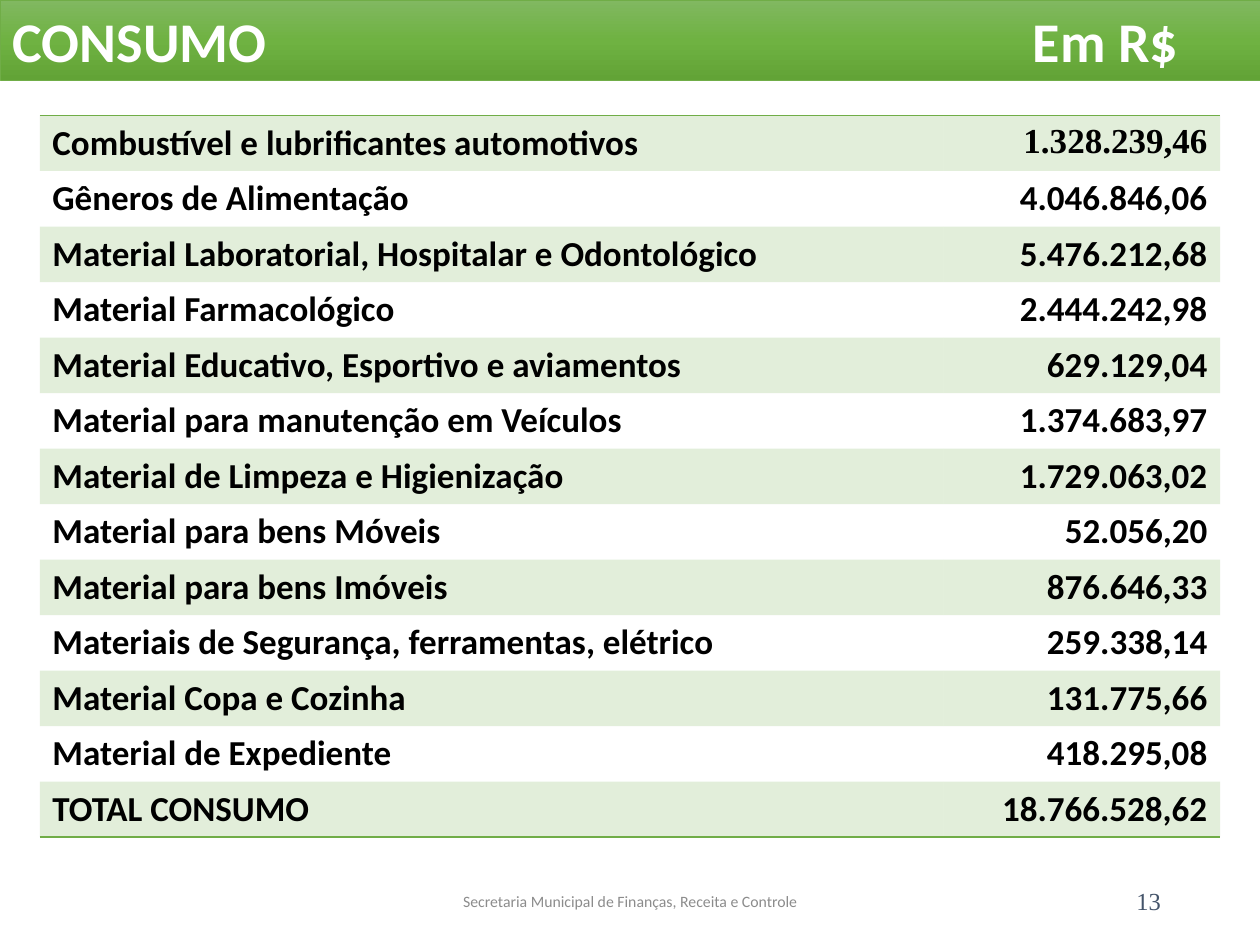
import copy
from dataclasses import dataclass

import pptx
import pptx.dml.color
import pptx.enum.text
import pptx.oxml
import pptx.oxml.ns
import pptx.util
from lxml import etree

Pt = pptx.util.Pt
Align = pptx.enum.text.PP_ALIGN
Anchor = pptx.enum.text.MSO_ANCHOR
qn = pptx.oxml.ns.qn


@dataclass(frozen=True)
class Theme:
    sans: str = "Calibri"
    serif: str = "Times New Roman"
    green: str = "70AD47"
    band_stops: tuple = ((0, "81B861"), (0.5, "6FB242"), (1, "62A336"))
    white: str = "FFFFFF"
    black: str = "000000"
    grey: str = "8C8C8C"
    slate: str = "44546A"
    title_size: int = 32
    table_size: int = 20
    number_size: int = 14
    footer_size: int = 9
    stripe_alpha: int = 20000
    plain_table_style: str = "{2D5ABB26-0587-4C30-8999-92F81FD0307C}"


THEME = Theme()

EXPENSES = [
    ("Combustível e lubrificantes automotivos", "1.328.239,46"),
    ("Gêneros de Alimentação", "4.046.846,06"),
    ("Material Laboratorial, Hospitalar e Odontológico", "5.476.212,68"),
    ("Material Farmacológico", "2.444.242,98"),
    ("Material Educativo, Esportivo e aviamentos", "629.129,04"),
    ("Material para manutenção em Veículos", "1.374.683,97"),
    ("Material de Limpeza e Higienização", "1.729.063,02"),
    ("Material para bens Móveis", "52.056,20"),
    ("Material para bens Imóveis", "876.646,33"),
    ("Materiais de Segurança, ferramentas, elétrico", "259.338,14"),
    ("Material Copa e Cozinha", "131.775,66"),
    ("Material de Expediente", "418.295,08"),
    ("TOTAL CONSUMO", "18.766.528,62"),
]


def rgb(value):
    return pptx.dml.color.RGBColor.from_string(value)


def style_paragraph(paragraph, size, color, font=THEME.sans, bold=False, align=Align.LEFT):
    paragraph.alignment = align
    paragraph.font.name = font
    paragraph.font.size = Pt(size)
    paragraph.font.bold = bold
    paragraph.font.color.rgb = rgb(color)


def fill_band(shape):
    """Fill a shape with the three-stop vertical gradient."""
    shape.fill.gradient()
    shape.fill.gradient_angle = 270
    stop_list = shape.element.spPr.find(".//" + qn("a:gsLst"))
    stop_list.append(copy.deepcopy(stop_list[0]))
    for stop, (position, color) in zip(shape.fill.gradient_stops, THEME.band_stops):
        stop.position = position
        stop.color.rgb = rgb(color)


def add_title_band(page, left_label, right_label, tab_position):
    title = page.shapes.title
    title.left, title.top, title.width, title.height = Pt(0), Pt(0), Pt(720), Pt(46)
    fill_band(title)
    title.line.color.rgb = rgb(THEME.green)
    title.line.width = Pt(0.5)
    frame = title.text_frame
    frame.word_wrap = True
    frame.auto_size = pptx.enum.text.MSO_AUTO_SIZE.NONE
    frame.vertical_anchor = Anchor.MIDDLE
    paragraph = frame.paragraphs[0]
    paragraph.text = f"{left_label}\t{right_label}"
    tabs = etree.SubElement(paragraph._p.get_or_add_pPr(), qn("a:tabLst"))
    etree.SubElement(tabs, qn("a:tab"), pos=str(Pt(tab_position)), algn="l")
    style_paragraph(paragraph, THEME.title_size, THEME.white, bold=True)


def add_label(page, text, left, width, size, color, font, align):
    box = page.shapes.add_textbox(Pt(left), Pt(500.5), Pt(width), Pt(28.75))
    frame = box.text_frame
    frame.word_wrap = True
    frame.vertical_anchor = Anchor.MIDDLE
    paragraph = frame.paragraphs[0]
    paragraph.text = text
    style_paragraph(paragraph, size, color, font, align=align)


def add_border(cell, side):
    """Draw one cell edge; side is lnT or lnB."""
    line = etree.Element(qn("a:" + side), w=str(Pt(1)))
    fill = etree.SubElement(line, qn("a:solidFill"))
    etree.SubElement(fill, qn("a:srgbClr"), val=THEME.green)
    cell._tc.get_or_add_tcPr().insert(0, line)


def fill_cell(cell, striped):
    if not striped:
        cell.fill.background()
        return
    cell.fill.solid()
    cell.fill.fore_color.rgb = rgb(THEME.green)
    color = cell._tc.tcPr.find(".//" + qn("a:srgbClr"))
    etree.SubElement(color, qn("a:alpha"), val=str(THEME.stripe_alpha))


def add_expense_table(page, expenses, row_height=31.25):
    count = len(expenses)
    frame = page.shapes.add_table(
        count, 2, Pt(22.75), Pt(66), Pt(674.5), Pt(row_height * count))
    table = frame.table
    table.first_row = False
    table.horz_banding = False
    table._tbl.tblPr.find(qn("a:tableStyleId")).text = THEME.plain_table_style
    for column, width in zip(table.columns, (516.25, 158.25)):
        column.width = Pt(width)
    for row, values in enumerate(expenses):
        table.rows[row].height = Pt(row_height)
        for column, value in enumerate(values):
            cell = table.cell(row, column)
            fill_cell(cell, striped=row % 2 == 0)
            if row == 0:
                add_border(cell, "lnT")
            if row == count - 1:
                add_border(cell, "lnB")
            paragraph = cell.text_frame.paragraphs[0]
            paragraph.text = value
            # The first amount alone is set in the serif face
            font = THEME.serif if (row, column) == (0, 1) else THEME.sans
            align = Align.RIGHT if column else Align.LEFT
            style_paragraph(paragraph, THEME.table_size, THEME.black, font, True, align)


def main():
    deck = pptx.Presentation()
    deck.slide_width, deck.slide_height = Pt(720), Pt(540)
    page = deck.slides.add_slide(deck.slide_layouts.get_by_name("Title Only"))

    # Heading and table
    add_title_band(page, "CONSUMO", "Em R$", tab_position=583)
    add_expense_table(page, EXPENSES)

    # Footer and page number
    add_label(page, "Secretaria Municipal de Finanças, Receita e Controle", 238.5, 243,
              THEME.footer_size, THEME.grey, THEME.sans, Align.CENTER)
    add_label(page, "13", 508.5, 162,
              THEME.number_size, THEME.slate, THEME.serif, Align.RIGHT)

    deck.save("out.pptx")


if __name__ == "__main__":
    main()
